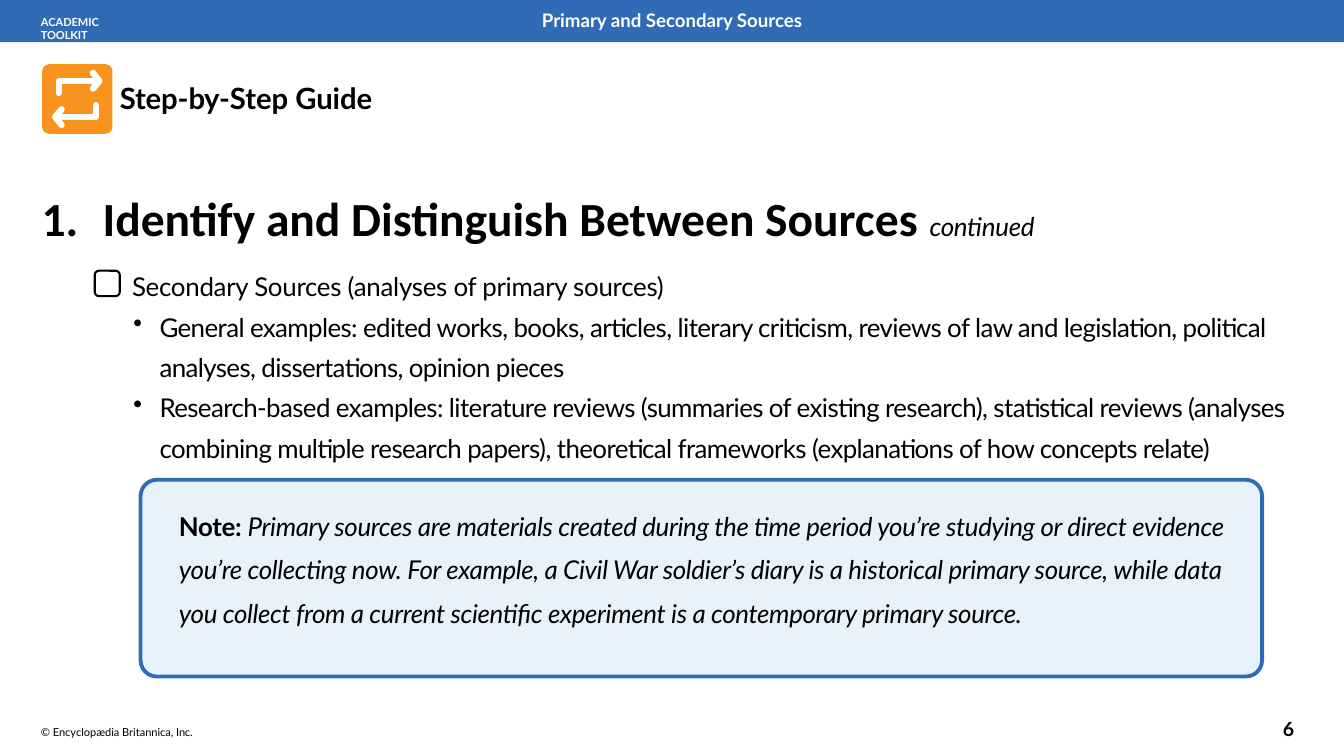
import pptx
import pptx.dml.color
import pptx.enum.shapes
import pptx.enum.text
import pptx.oxml.ns
import pptx.util
import lxml.etree

Pt = pptx.util.Pt
RGB = pptx.dml.color.RGBColor
SHAPE = pptx.enum.shapes.MSO_SHAPE
ALIGN = pptx.enum.text.PP_ALIGN
qn = pptx.oxml.ns.qn

BLUE = RGB(0x30, 0x6C, 0xB5)
NOTE_BLUE = RGB(0xE8, 0xF2, 0xFB)
ORANGE = RGB(0xF8, 0x94, 0x1D)
WHITE = RGB(0xFF, 0xFF, 0xFF)
BLACK = RGB(0, 0, 0)

SLIDE_W, SLIDE_H = 1583.28, 890.64
MARGIN = 48.24
BODY_SIZE = 30.5


def add_panel(s, kind, x, y, w, h, fill=None, line=None, weight=0, radius=None):
    sp = s.shapes.add_shape(kind, Pt(x), Pt(y), Pt(w), Pt(h))
    sp.shadow.inherit = False
    if radius is not None:
        sp.adjustments[0] = radius
    if fill is None:
        sp.fill.background()
    else:
        sp.fill.solid()
        sp.fill.fore_color.rgb = fill
    if line is None:
        sp.line.fill.background()
    else:
        sp.line.color.rgb = line
        sp.line.width = Pt(weight)
    return sp


def add_text(s, x, y, w, h, inset=(0, 1.2, 0, 0)):
    tf = s.shapes.add_textbox(Pt(x), Pt(y), Pt(w), Pt(h)).text_frame
    tf.word_wrap = True
    tf.margin_left, tf.margin_top, tf.margin_right, tf.margin_bottom = map(Pt, inset)
    return tf


def add_run(p, text, size, color=BLACK, bold=False, italic=False, spacing=0, font="Lato"):
    r = p.add_run()
    r.text = text
    r.font.name = font
    r.font.size = Pt(size)
    r.font.bold = bold
    r.font.italic = italic
    r.font.color.rgb = color
    if spacing:
        r._r.get_or_add_rPr().set("spc", str(round(spacing * 100)))


def set_indent(p, left, first=0):
    pPr = p._p.get_or_add_pPr()
    pPr.set("marL", str(Pt(left)))
    pPr.set("indent", str(Pt(first)))
    return pPr


def header(s, x, y, w, h):
    add_panel(s, SHAPE.RECTANGLE, x, y, w, h, BLUE)
    p = add_text(s, x + MARGIN, y + 17.28, 117.36, 18).paragraphs[0]
    add_run(p, "ACADEMIC ", 13, WHITE, bold=True)
    add_run(p, "TOOLKIT", 13, WHITE, bold=True, spacing=-0.1)
    title_w = 378
    p = add_text(s, x + (w - title_w) / 2, y + 9.36, title_w, 28).paragraphs[0]
    p.alignment = ALIGN.CENTER
    add_run(p, "Primary and Secondary Sources", 22, WHITE, bold=True)


def cycle_icon(s, x, y, w, h):
    add_panel(s, SHAPE.ROUNDED_RECTANGLE, x, y, w, h, ORANGE, radius=0.1)
    cx, cy = x + w / 2, y + h / 2
    shaft = [(-21.8, -7.2), (-21.8, -21.2), (25, -21.2)]
    head = [(18.5, -30.6), (26, -21.2), (18.5, -12.2)]
    for sign in (1, -1):
        strokes = [[(Pt(cx + sign * dx), Pt(cy + sign * dy)) for dx, dy in stroke]
                   for stroke in (shaft, head)]
        fb = s.shapes.build_freeform(*strokes[0][0])
        fb.add_line_segments(strokes[0][1:], close=False)
        fb.move_to(*strokes[1][0])
        fb.add_line_segments(strokes[1][1:], close=False)
        arrow = fb.convert_to_shape()
        arrow.shadow.inherit = False
        arrow.fill.background()
        arrow.line.color.rgb = WHITE
        arrow.line.width = Pt(7.5)
        ln = arrow.line._get_or_add_ln()
        ln.set("cap", "rnd")
        lxml.etree.SubElement(ln, qn("a:round"))


def guide_title(s, x, y, w, h):
    cycle_icon(s, x, y, 82.8, h)
    p = add_text(s, x + 91.4, y + 18, w - 91.4, 44).paragraphs[0]
    for text, spacing in (("Step-", -0.1), ("by-", -0.7), ("Step ", 0), ("Guide", -0.1)):
        add_run(p, text, 34.5, bold=True, spacing=spacing)


def source_list(s, x, y, w, h):
    tf = add_text(s, x, y, w, h)
    p = tf.paragraphs[0]
    tabs = lxml.etree.SubElement(set_indent(p, 0.72), qn("a:tabLst"))
    lxml.etree.SubElement(tabs, qn("a:tab"), pos=str(Pt(60.48)), algn="l")
    add_run(p, "1.\tIdentify and Distinguish Between Sources ", 56, bold=True, font="Calibri")
    add_run(p, "continued", BODY_SIZE, italic=True, spacing=-0.3)

    p = tf.add_paragraph()
    set_indent(p, 106.56, 0.72)
    p.line_spacing = 1.3
    p.space_before = Pt(18)
    add_run(p, "Secondary Sources (analyses of primary sources)", BODY_SIZE, spacing=-0.3)

    for text in (
        "General examples: edited works, books, articles, literary criticism, reviews of law "
        "and legislation, political analyses, dissertations, opinion pieces",
        "Research-based examples: literature reviews (summaries of existing research), "
        "statistical reviews (analyses combining multiple research papers), theoretical "
        "frameworks (explanations of how concepts relate)",
    ):
        p = tf.add_paragraph()
        lxml.etree.SubElement(set_indent(p, 139.68, -30.96), qn("a:buChar"), char="•")
        p.line_spacing = 1.3
        add_run(p, text, BODY_SIZE, spacing=-0.7)

    add_panel(s, SHAPE.ROUNDED_RECTANGLE, x + 63.36, y + 97.2, 29.5, 30,
              line=BLACK, weight=2.47, radius=0.17)


def note_box(s, x, y, w, h):
    add_panel(s, SHAPE.ROUNDED_RECTANGLE, x, y, w, h, NOTE_BLUE, BLUE, 4.5, 0.083)
    p = add_text(s, x + 38.16, y + 18, 1260, 155.5, (7.2, 3.6, 7.2, 3.6)).paragraphs[0]
    p.line_spacing = 1.4
    add_run(p, "Note:\u00a0", BODY_SIZE, bold=True, spacing=-0.4)
    add_run(p, "Primary sources are materials created during the time period you’re studying "
               "or direct evidence you’re collecting now. For example, a Civil War soldier’s "
               "diary is a historical primary source, while data you collect from a current "
               "scientific experiment is a contemporary primary source.",
            BODY_SIZE, italic=True, spacing=-0.4)


def footer(s, x, y, w, h):
    p = add_text(s, x, y + 10, 185, 18).paragraphs[0]
    add_run(p, "© Encyclopædia Britannica, ", 13)
    add_run(p, "Inc.", 13, spacing=-0.2)
    p = add_text(s, x + w - 26.6, y, 26.6, h).paragraphs[0]
    add_run(p, "6", 23, bold=True, spacing=-0.2)


def main():
    prs = pptx.Presentation()
    prs.slide_width, prs.slide_height = Pt(SLIDE_W), Pt(SLIDE_H)
    s = prs.slides.add_slide(prs.slide_layouts[6])
    header(s, 0, 0, SLIDE_W, 49.68)
    guide_title(s, 49.68, 75.6, 395.3, 82)
    source_list(s, MARGIN, 221.76, 1489, 326.2)
    note_box(s, 165.6, 565.2, 1321.2, 231.84)
    footer(s, MARGIN, 843.84, 1489.7, 29.5)
    prs.save("out.pptx")


if __name__ == "__main__":
    main()
